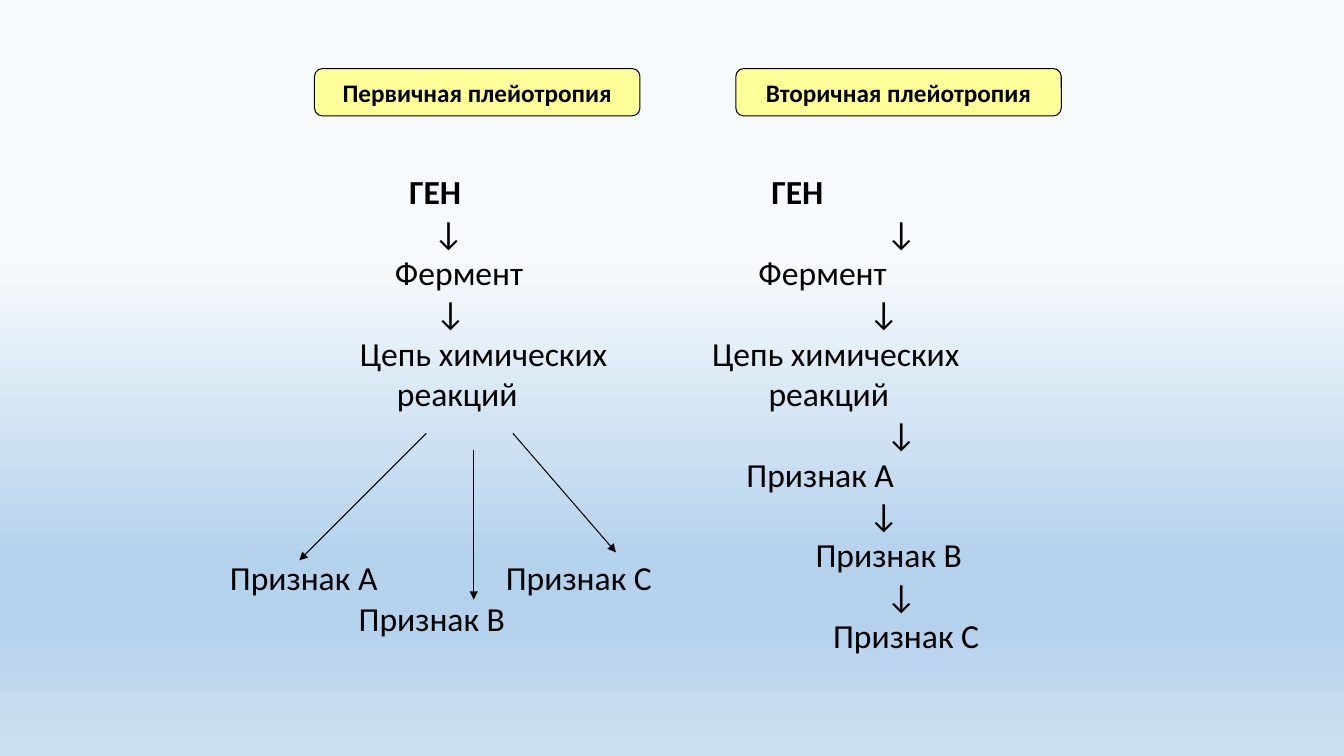
from lxml.etree import SubElement
from pptx import Presentation
from pptx.dml.color import RGBColor
from pptx.enum.shapes import MSO_CONNECTOR as Connector, MSO_SHAPE as Shape
from pptx.enum.text import MSO_ANCHOR as Anchor, PP_ALIGN as Align
from pptx.oxml.ns import qn
from pptx.util import Inches, Pt

INSET = Inches(0.1)


def color(hex_value):
    return RGBColor.from_string(hex_value)


class Deck:
    """Style and current slide; every length is a percentage of the slide's size."""
    font, ink, label_fill = "Calibri", "000000", "FFFF99"
    body_size, label_size, line_width = Pt(24), Pt(18), Pt(0.75)

    def __init__(self, width, height):
        self.presentation = Presentation()
        self.presentation.slide_width = Inches(width)
        self.presentation.slide_height = Inches(height)
        self.slide = self.presentation.slides.add_slide(self.presentation.slide_layouts[6])

    def x(self, share):
        return round(self.presentation.slide_width * share / 100)

    def y(self, share):
        return round(self.presentation.slide_height * share / 100)

    def box(self, left, top, width, height):
        return self.x(left), self.y(top), self.x(width), self.y(height)

    def background(self, stops):
        """Fill the background with a gradient running from top to bottom."""
        fill = self.slide.background.fill
        fill.gradient()
        fill.gradient_angle = 270
        stop_list = self.slide.element.find(".//" + qn("a:gsLst"))
        for stop in list(stop_list):
            stop_list.remove(stop)
        for position, hex_value in stops:
            stop = SubElement(stop_list, qn("a:gs"), pos=str(position * 1000))
            SubElement(stop, qn("a:srgbClr"), val=hex_value)

    def style(self, paragraph, size, bold=False):
        font = paragraph.font
        font.name, font.size, font.bold = self.font, size, bold
        font.color.rgb = color(self.ink)

    def label(self, text, *place):
        shape = self.slide.shapes.add_shape(Shape.ROUNDED_RECTANGLE, *self.box(*place))
        shape.shadow.inherit = False
        shape.fill.solid()
        shape.fill.fore_color.rgb = color(self.label_fill)
        shape.line.color.rgb = color(self.ink)
        shape.line.width = self.line_width
        frame = shape.text_frame
        frame.word_wrap, frame.vertical_anchor = False, Anchor.MIDDLE
        paragraph = frame.paragraphs[0]
        paragraph.text, paragraph.alignment = text, Align.CENTER
        self.style(paragraph, self.label_size, bold=True)

    def tabbed_text(self, lines, *place, bold_lines=()):
        """Write lines of (left edge, words) pairs, each pair placed by a tab stop."""
        shape = self.slide.shapes.add_textbox(*self.box(*place))
        frame = shape.text_frame
        frame.word_wrap = True
        for index, line in enumerate(lines):
            paragraph = frame.add_paragraph() if index else frame.paragraphs[0]
            paragraph.text = "".join("\t" + words for _, words in line)
            paragraph.alignment = Align.LEFT
            self.style(paragraph, self.body_size, bold=index in bold_lines)
            tabs = SubElement(paragraph._p.get_or_add_pPr(), qn("a:tabLst"))
            paragraph._p.pPr.insert(0, tabs)
            for edge, _ in line:
                stop = self.x(edge) - shape.left - INSET
                SubElement(tabs, qn("a:tab"), pos=str(stop), algn="l")

    def arrow(self, start_x, start_y, end_x, end_y):
        connector = self.slide.shapes.add_connector(
            Connector.STRAIGHT, self.x(start_x), self.y(start_y), self.x(end_x), self.y(end_y))
        connector.line.color.rgb = color(self.ink)
        connector.line.width = self.line_width
        SubElement(connector.line._get_or_add_ln(), qn("a:tailEnd"), type="triangle")
        SubElement(connector._element.spPr, qn("a:effectLst"))


def main():
    deck = Deck(13.33, 7.5)
    deck.background([(34, "F7FAFD"), (74, "B5D2EC"), (83, "B5D2EC"), (100, "CEE1F2")])

    for left, title in ((23.4, "Первичная плейотропия"), (54.75, "Вторичная плейотропия")):
        deck.label(title, left, 9.07, 24.22, 6.27)

    outer_arrow, inner_arrow = (65.95, "↓"), (64.65, "↓")
    pathways = [
        [(30.45, "ГЕН"), (57.4, "ГЕН")],
        [(32.25, "↓"), outer_arrow],
        [(29.4, "Фермент"), (56.45, "Фермент")],
        [(32.4, "↓"), inner_arrow],
        [(26.8, "Цепь химических"), (53, "Цепь химических")],
        [(29.55, "реакций"), (57.2, "реакций")],
        [outer_arrow],
        [(55.55, "Признак А")],
        [inner_arrow],
        [(60.7, "Признак В")],
        [outer_arrow],
        [(62, "Признак С")],
    ]
    deck.tabbed_text(pathways, 22.05, 22, 59.85, 66, bold_lines=(0,))

    for ends in ((31.72, 57.33, 22.27, 74.13),
                 (35.25, 59.47, 35.25, 79.33),
                 (38.17, 57.33, 45.83, 73.07)):
        deck.arrow(*ends)

    primary_traits = [[(17.12, "Признак А"), (37.65, "Признак С")], [(26.7, "Признак В")]]
    deck.tabbed_text(primary_traits, 16.35, 73.07, 33.15, 12.13)

    deck.presentation.save("out.pptx")


if __name__ == "__main__":
    main()
